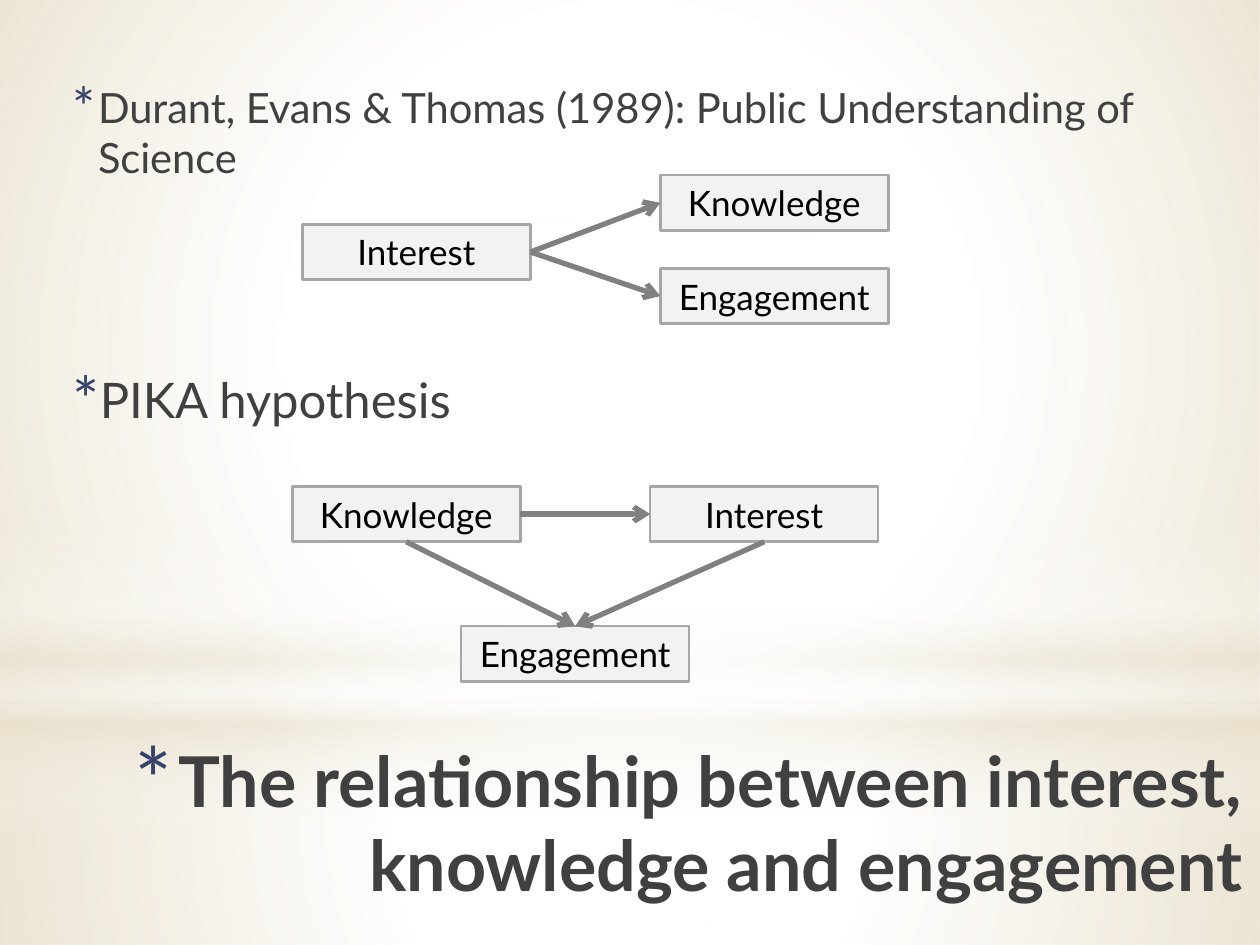
from lxml import etree
from pptx import Presentation
from pptx import util as u
from pptx.dml.color import RGBColor
from pptx.enum import shapes, text
from pptx.oxml import parse_xml
from pptx.oxml.ns import nsdecls, qn

rgb = RGBColor.from_string
FONT = "Lato"

prs = Presentation()
prs.slide_width, prs.slide_height = u.Inches(10), u.Inches(7.5)
col, row = prs.slide_width / 100, prs.slide_height / 75


def grid(x, y, w, h):
    """Turn columns and rows into left, top, width and height."""
    return round(x * col), round(y * row), round(w * col), round(h * row)


def write_bullet(sp, words, size, hang, bullet_size):
    """Fill a text shape with one starred paragraph and return it with its run."""
    tf = sp.text_frame
    tf.word_wrap = True
    tf.auto_size = text.MSO_AUTO_SIZE.NONE
    tf.vertical_anchor = text.MSO_ANCHOR.TOP
    p = tf.paragraphs[0]
    p.space_before, p.space_after = u.Pt(0), u.Pt(3)
    r = p.add_run()
    r.text = words
    r.font.name, r.font.size = FONT, u.Pt(size)
    r.font.color.rgb = rgb("404040")
    pPr = p._p.get_or_add_pPr()
    left, first = hang
    pPr.set("marL", str(u.Inches(left)))
    pPr.set("indent", str(-u.Inches(first)))
    color = etree.SubElement(pPr, qn("a:buClr"))
    etree.SubElement(color, qn("a:srgbClr"), val="35436A")
    etree.SubElement(pPr, qn("a:buSzPct"), val=str(bullet_size * 1000))
    etree.SubElement(pPr, qn("a:buFont"), typeface=FONT)
    etree.SubElement(pPr, qn("a:buChar"), char="*")
    return p, r


s = prs.slides.add_slide(prs.slide_layouts[5])
s.background.fill.solid()
s.background.fill.fore_color.rgb = rgb("FFFFFF")

# Backdrop: soft gradients, each stop is (position %, colour, opacity %)
RADIAL = ('<a:path path="circle"><a:fillToRect l="50000" t="50000" '
          'r="50000" b="50000"/></a:path>')
DOWN = '<a:lin ang="5400000" scaled="0"/>'
RECT, OVAL = shapes.MSO_SHAPE.RECTANGLE, shapes.MSO_SHAPE.OVAL
WHITE, SAND = "FFFFFF", "E7DEC9"
backdrop = [
    (RECT, (0, 55.8, 100, 19.2), RADIAL,
     [(0, WHITE, 91), (37, WHITE, 76), (100, SAND, 79)]),
    (RECT, (0, 0, 100, 55.8), RADIAL,
     [(0, WHITE, 89), (48, WHITE, 62), (100, SAND, 79)]),
    (RECT, (0, 41.2, 100, 25), DOWN,
     [(0, WHITE, 0), (29, WHITE, 30), (45, SAND, 40),
      (55, WHITE, 26), (65, SAND, 60), (100, WHITE, 0)]),
    (OVAL, (0, 17.5, 100, 55.8), RADIAL, [(0, WHITE, 100), (56, WHITE, 0)]),
]
for kind, place, direction, stops in backdrop:
    sp = s.shapes.add_shape(kind, *grid(*place))
    sp.shadow.inherit = False
    sp.line.fill.background()
    sp.fill.background()
    gs = "".join(
        f'<a:gs pos="{pos * 1000}"><a:srgbClr val="{color}">'
        f'<a:alpha val="{alpha * 1000}"/></a:srgbClr></a:gs>'
        for pos, color, alpha in stops)
    spPr = sp.element.spPr
    spPr.replace(spPr.find(qn("a:noFill")), parse_xml(
        f'<a:gradFill rotWithShape="1" {nsdecls("a")}>'
        f'<a:gsLst>{gs}</a:gsLst>{direction}</a:gradFill>'))

# Title, brought in front of the backdrop
title = s.shapes.title
title.left, title.top, title.width, title.height = grid(0, 58, 99.6, 17.3)
title.element.getparent().append(title.element)
p, r = write_bullet(title, "The relationship between interest, knowledge and engagement",
                    40, (0.35, 0.35), 128)
p.alignment = text.PP_ALIGN.RIGHT
r.font.bold = True

# Headings of the two models
for y, words, size in [
    (6, "Durant, Evans & Thomas (1989): Public Understanding of Science", 23.8),
    (28.8, "PIKA hypothesis", 28),
]:
    sp = s.shapes.add_textbox(*grid(4.3, y, 91.3, 7.9))
    write_bullet(sp, words, size, (0.25, 0.2), 130)

# Boxes of each model, then arrows as (from, side, to, side)
TOP, LEFT, BOTTOM, RIGHT = range(4)
models = [
    ({"Interest": (24, 17.8), "Knowledge": (52.4, 13.9), "Engagement": (52.4, 21.3)},
     [("Interest", RIGHT, "Knowledge", LEFT),
      ("Interest", RIGHT, "Engagement", LEFT)]),
    ({"Knowledge": (23.2, 38.6), "Interest": (51.6, 38.6), "Engagement": (36.6, 49.7)},
     [("Knowledge", RIGHT, "Interest", LEFT),
      ("Interest", BOTTOM, "Engagement", TOP),
      ("Knowledge", BOTTOM, "Engagement", TOP)]),
]
for places, arrows in models:
    boxes = {}
    for name, (x, y) in places.items():
        sp = boxes[name] = s.shapes.add_shape(RECT, *grid(x, y, 18.1, 4.4))
        sp.shadow.inherit = False
        sp.fill.solid()
        sp.fill.fore_color.rgb = rgb("F2F2F2")
        sp.line.color.rgb = rgb("A6A6A6")
        sp.line.width = u.Pt(1.5)
        tf = sp.text_frame
        tf.word_wrap = True
        tf.vertical_anchor = text.MSO_ANCHOR.MIDDLE
        p = tf.paragraphs[0]
        p.alignment = text.PP_ALIGN.CENTER
        r = p.add_run()
        r.text = name
        r.font.name, r.font.size = FONT, u.Pt(20)
        r.font.color.rgb = rgb("000000")
    for start, start_side, end, end_side in arrows:
        c = s.shapes.add_connector(shapes.MSO_CONNECTOR.STRAIGHT, 0, 0, 0, 0)
        c.begin_connect(boxes[start], start_side)
        c.end_connect(boxes[end], end_side)
        c.line.color.rgb = rgb("808080")
        c.line.width = u.Pt(3)
        etree.SubElement(c.line._get_or_add_ln(), qn("a:tailEnd"), type="arrow")
        etree.SubElement(c.element.spPr, qn("a:effectLst"))

prs.save("out.pptx")
